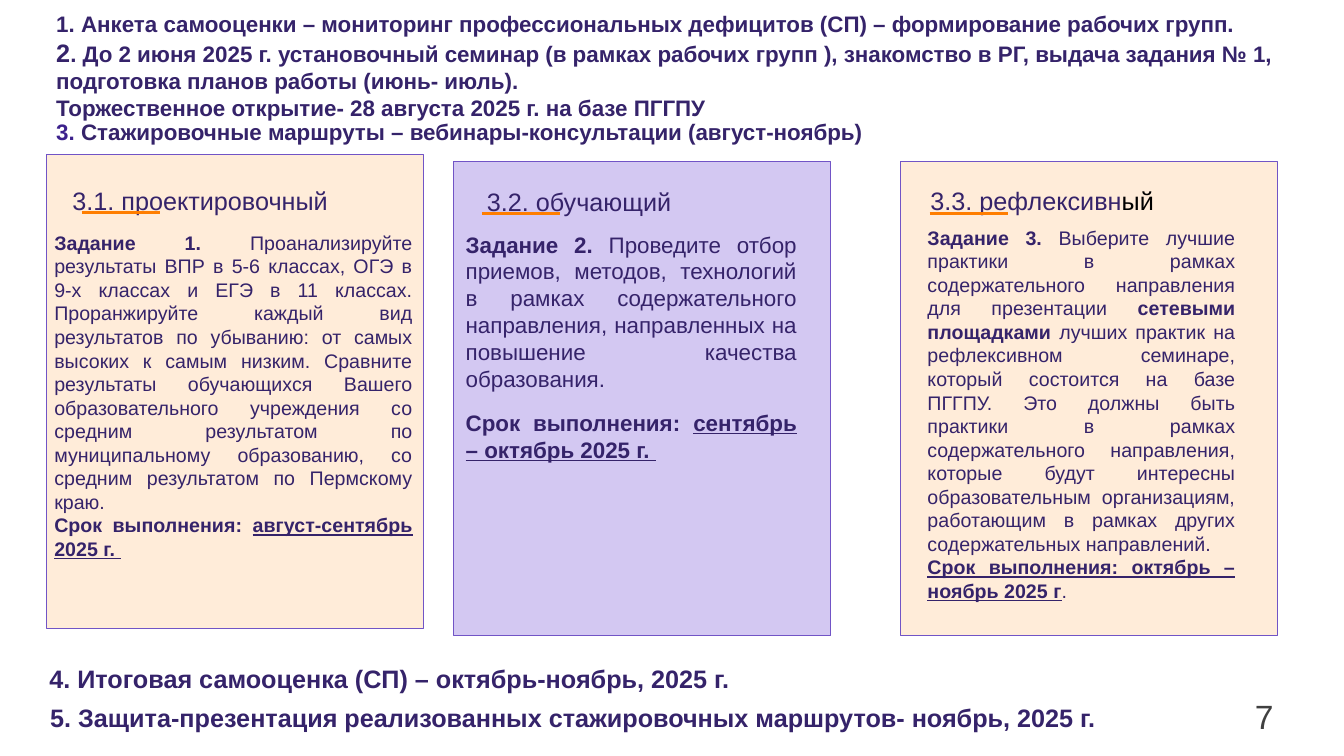
"""Builds the slide on the stages and tasks of the internship routes."""
from dataclasses import dataclass

from lxml import etree
from pptx import Presentation
from pptx.dml.color import RGBColor
from pptx.enum.shapes import MSO_CONNECTOR, MSO_SHAPE
from pptx.enum.text import MSO_ANCHOR, PP_ALIGN
from pptx.oxml.ns import qn
from pptx.util import Inches, Pt

RECTANGLE = MSO_SHAPE.RECTANGLE
STRAIGHT = MSO_CONNECTOR.STRAIGHT
LEFT, RIGHT, JUSTIFY = PP_ALIGN.LEFT, PP_ALIGN.RIGHT, PP_ALIGN.JUSTIFY
TOP, MIDDLE = MSO_ANCHOR.TOP, MSO_ANCHOR.MIDDLE


@dataclass(frozen=True)
class Theme:
    font: str = "Arial"
    ink: str = "35236A"
    accent_ink: str = "3C218C"
    black: str = "000000"
    grey: str = "404040"
    peach: str = "FFECD9"
    lilac: str = "D3C8F2"
    border: str = "7154C6"
    orange: str = "FF7E00"
    small: int = 14
    normal: int = 16
    large: int = 18
    number: int = 24


THEME = Theme()
BOLD = {"bold": True}
UNDERLINED = {"bold": True, "underline": True}

INTRO = [
    [("1. Анкета самооценки – мониторинг профессиональных дефицитов (СП) – "
      "формирование рабочих групп.", {})],
    [("2", {"size": THEME.large}),
     (". До 2 июня 2025 г. установочный семинар (в рамках рабочих групп ), "
      "знакомство в РГ, выдача задания № 1, подготовка планов работы (июнь- июль).", {})],
    [("Торжественное открытие- 28 августа 2025 г. на базе ПГГПУ", {})],
]
ROUTES = [
    [("3. ", {"color": THEME.accent_ink}),
     ("Стажировочные маршруты – вебинары-консультации (август-ноябрь)", {})],
]
CARDS = [
    {
        "card": (3.45, 20.4), "fill": THEME.peach, "rule": (6.08, 28.13),
        "heading_at": (4.65, 23.87, 27.16, 5.33),
        "heading": [("3.1. проектировочный", {})],
        "task_at": (3.15, 29.87, 28.28, 45.33), "size": THEME.small, "gap": 0,
        "task": [
            [("Задание 1. ", BOLD),
             ("Проанализируйте результаты ВПР в 5-6 классах, ОГЭ в 9-х классах и ЕГЭ "
              "в 11 классах. Проранжируйте каждый вид результатов по убыванию: от самых "
              "высоких к самым низким. Сравните результаты обучающихся Вашего "
              "образовательного учреждения со средним результатом по муниципальному "
              "образованию, со средним результатом по Пермскому краю.", {})],
            [("Срок выполнения: ", BOLD), ("август-сентябрь 2025 г. ", UNDERLINED)],
        ],
    },
    {
        "card": (33.76, 21.33), "fill": THEME.lilac, "rule": (35.86, 28.27),
        "heading_at": (35.48, 24, 18.15, 5.33),
        "heading": [("3.2. обучающий", {})],
        "task_at": (33.76, 29.87, 26.26, 37.73), "size": THEME.normal, "gap": 6,
        "task": [
            [("Задание 2. ", BOLD),
             ("Проведите отбор приемов, методов, технологий в рамках содержательного "
              "направления, направленных на повышение качества образования.", {})],
            [("Срок выполнения: ", BOLD), ("сентябрь – октябрь 2025 г. ", UNDERLINED)],
        ],
    },
    {
        "card": (66.99, 21.33), "fill": THEME.peach, "rule": (69.17, 28.27),
        "heading_at": (68.49, 23.87, 23.48, 5.33),
        "heading": [("3.3. рефлексивн", {}), ("ый", {"color": THEME.black})],
        "task_at": (68.12, 29.2, 24.53, 54.67), "size": THEME.small, "gap": 0,
        "task": [
            [("Задание 3.", BOLD),
             (" Выберите лучшие практики в рамках содержательного направления для "
              "презентации ", {}),
             ("сетевыми площадками ", BOLD),
             ("лучших практик на рефлексивном семинаре, который состоится на базе ПГГПУ. "
              "Это должны быть практики в рамках содержательного направления, которые "
              "будут интересны образовательным организациям, работающим в рамках других "
              "содержательных направлений.", {})],
            [("Срок выполнения: октябрь –ноябрь 2025 г", UNDERLINED), (".", {})],
        ],
    },
]
CLOSING = [
    ((2.93, 87.07, 64.07, 5.33), "4. Итоговая самооценка (СП) – октябрь-ноябрь, 2025 г."),
    ((3, 92.27, 91.6, 5.33),
     "5. Защита-презентация реализованных стажировочных маршрутов- ноябрь, 2025 г."),
]
PAGE_NUMBER = "7"

INTRO_AT = (3.45, 0.67, 95.57, 19.73)
NUMBER_AT = (84.92, 92, 10.58, 5.33)
CARD_SIZE = (28.06, 62.8)
RULE_LENGTH = 5.81

deck = Presentation()
deck.slide_width, deck.slide_height = Inches(13.33), Inches(7.5)
page = deck.slides.add_slide(deck.slide_layouts[6])
COLUMN, ROW = deck.slide_width / 100, deck.slide_height / 100


def place(left, top, width, height):
    return (round(left * COLUMN), round(top * ROW),
            round(width * COLUMN), round(height * ROW))


def add_card(left, top, fill):
    card = page.shapes.add_shape(RECTANGLE, *place(left, top, *CARD_SIZE))
    card.shadow.inherit = False
    card.fill.solid()
    card.fill.fore_color.rgb = RGBColor.from_string(fill)
    card.line.color.rgb = RGBColor.from_string(THEME.border)
    card.line.width = Pt(0.75)


def add_rule(left, top):
    x, y, length, _ = place(left, top, RULE_LENGTH, 0)
    rule = page.shapes.add_connector(STRAIGHT, x, y, x + length, y)
    rule.line.color.rgb = RGBColor.from_string(THEME.orange)
    rule.line.width = Pt(2.25)
    etree.SubElement(rule._element.spPr, qn("a:effectLst"))


def write(frame, paragraphs, size, color=THEME.ink, bold=False, align=LEFT,
          gap=0, spacing=None, indent=0):
    for content in paragraphs:
        first = not frame.paragraphs[0].runs
        para = frame.paragraphs[0] if first else frame.add_paragraph()
        para.alignment = align
        para.space_before = para.space_after = Pt(gap)
        if spacing:
            para.line_spacing = spacing
        if indent:
            para._p.get_or_add_pPr().set("marL", str(Inches(indent)))
        for text, style in content:
            span = para.add_run()
            span.text = text
            span.font.name = THEME.font
            span.font.size = Pt(style.get("size", size))
            span.font.bold = style.get("bold", bold)
            span.font.underline = style.get("underline", False)
            span.font.color.rgb = RGBColor.from_string(style.get("color", color))


def add_text(area, paragraphs, anchor=TOP, **style):
    box = page.shapes.add_textbox(*place(*area))
    frame = box.text_frame
    frame.word_wrap = True
    frame.vertical_anchor = anchor
    write(frame, paragraphs, **style)
    return frame


def main():
    for card in CARDS:
        add_card(*card["card"], card["fill"])
        add_text(card["heading_at"], [card["heading"]], size=THEME.large)
        add_text(card["task_at"], card["task"], size=card["size"],
                 gap=card["gap"], align=JUSTIFY, indent=0.02)
        add_rule(*card["rule"])
    intro = add_text(INTRO_AT, INTRO, size=THEME.normal, bold=True)
    write(intro, ROUTES, size=THEME.normal, bold=True, spacing=0.9)
    for area, text in CLOSING:
        add_text(area, [[(text, {})]], size=THEME.large, bold=True)
    add_text(NUMBER_AT, [[(PAGE_NUMBER, {})]], anchor=MIDDLE,
             size=THEME.number, color=THEME.grey, align=RIGHT)
    deck.save("out.pptx")


if __name__ == "__main__":
    main()
